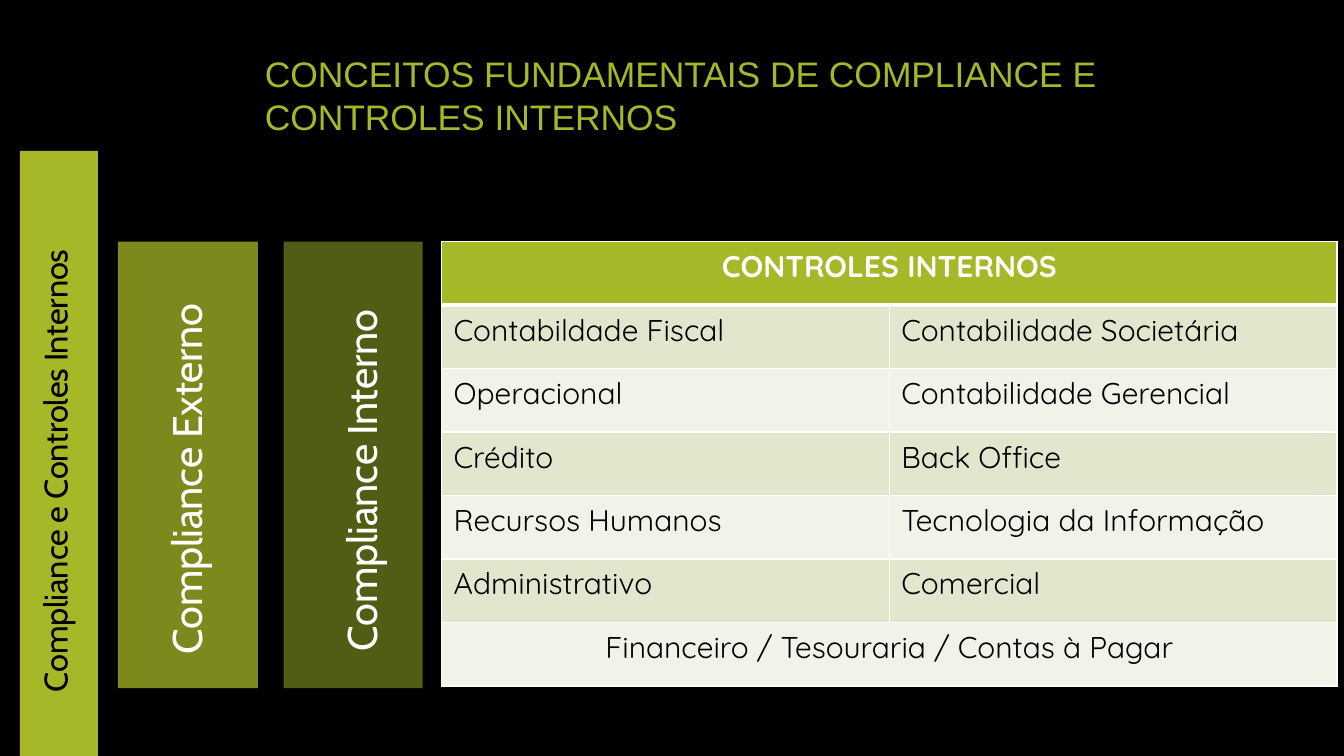
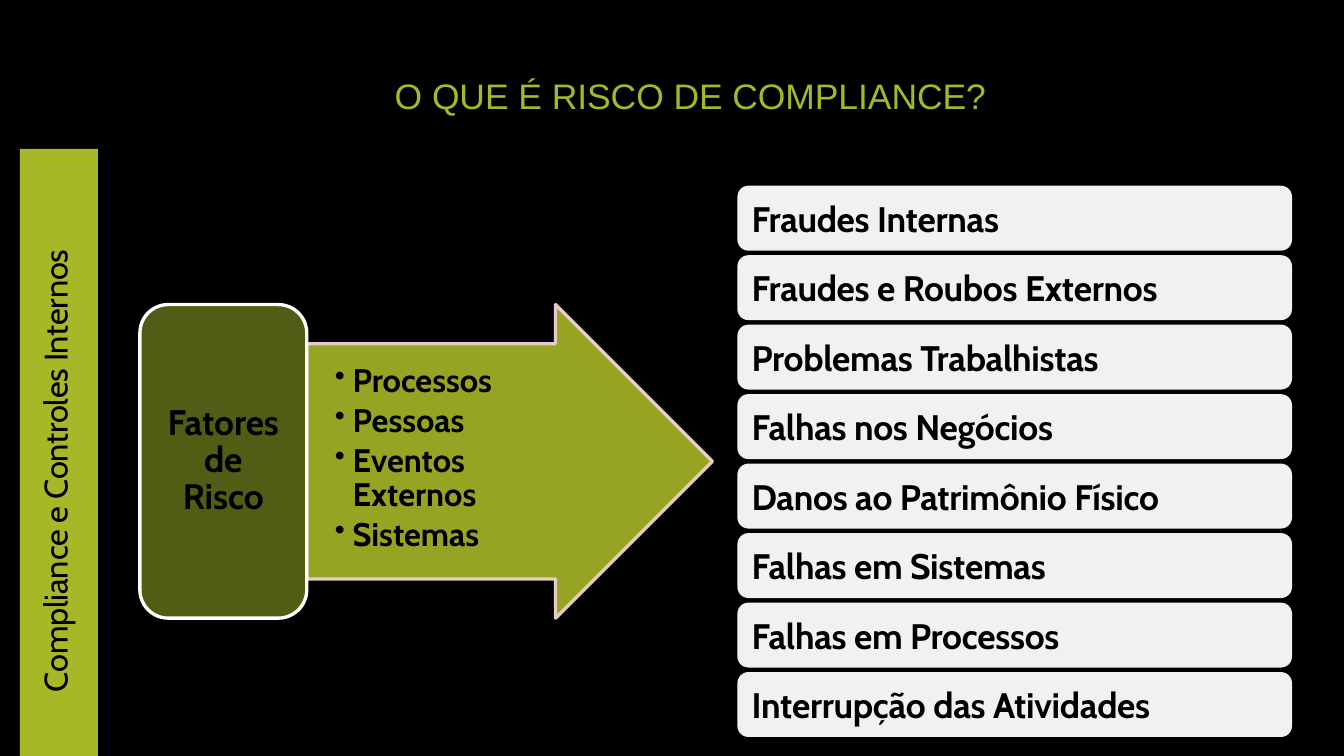
"""Builds two slides on compliance, internal controls and compliance risk."""
from dataclasses import dataclass

from lxml import etree
from pptx import Presentation
from pptx.dml.color import RGBColor
from pptx.enum.shapes import MSO_SHAPE
from pptx.enum.text import MSO_ANCHOR, PP_ALIGN
from pptx.oxml.ns import qn
from pptx.util import Pt

RECT, ROUND, ARROW = MSO_SHAPE.RECTANGLE, MSO_SHAPE.ROUNDED_RECTANGLE, MSO_SHAPE.RIGHT_ARROW
LEFT, CENTER = PP_ALIGN.LEFT, PP_ALIGN.CENTER
TOP, MIDDLE = MSO_ANCHOR.TOP, MSO_ANCHOR.MIDDLE
EMU_PER_PX = 7620
WIDTH, HEIGHT = 1345, 757


@dataclass(frozen=True)
class Theme:
    black: str = "000000"
    white: str = "FFFFFF"
    lime: str = "A6B727"
    olive: str = "7D891D"
    dark_olive: str = "535C14"
    pink: str = "E8CACA"
    gray: str = "F1F1F1"
    bands: tuple = ("E1E6CD", "F1F3E8")
    title_font: str = "Arial"
    body_font: str = "Cabin"
    table_font: str = "Quicksand"
    title_size: float = 21.3
    pillar_size: float = 24.9
    label_size: float = 19.6
    table_size: float = 18


T = Theme()

SIDEBAR = "Compliance e Controles Internos"
CONTROLS_TITLE = "CONCEITOS FUNDAMENTAIS DE COMPLIANCE E CONTROLES INTERNOS"
RISK_TITLE = "O QUE É RISCO DE COMPLIANCE?"
PILLARS = [
    ("Compliance Externo", T.olive, (118, 242, 140, 447), (161, 277, 50, 378)),
    ("Compliance Interno", T.dark_olive, (284, 242, 139, 447), (336, 282, 50, 370)),
]
CONTROLS = [
    ("CONTROLES INTERNOS",),
    ("Contabildade Fiscal", "Contabilidade Societária"),
    ("Operacional", "Contabilidade Gerencial"),
    ("Crédito", "Back Office"),
    ("Recursos Humanos", "Tecnologia da Informação"),
    ("Administrativo", "Comercial"),
    ("Financeiro / Tesouraria / Contas à Pagar",),
]
FACTORS_LABEL = "Fatores\vde\vRisco"
FACTORS = ["Processos", "Pessoas", "Eventos Externos", "Sistemas"]
RISKS = [
    "Fraudes Internas", "Fraudes e Roubos Externos", "Problemas Trabalhistas",
    "Falhas nos Negócios", "Danos ao Patrimônio Físico", "Falhas em Sistemas",
    "Falhas em Processos", "Interrupção das Atividades",
]


def px(n):
    return round(n * EMU_PER_PX)


def rgb(color):
    return RGBColor.from_string(color)


def write(tf, *lines, size, color=T.black, font=T.body_font, bold=False, align=LEFT,
          spc=0, leading=None, before=0, bullet=False):
    for i, line in enumerate(lines):
        p = tf.paragraphs[0] if i == 0 else tf.add_paragraph()
        p.text = line
        p.alignment = align
        p.space_before = Pt(before)
        if leading:
            p.line_spacing = leading
        if bullet:
            pPr = p._p.get_or_add_pPr()
            pPr.set("marL", str(px(20)))
            pPr.set("indent", str(px(-18)))
            etree.SubElement(pPr, qn("a:buSzPct")).set("val", "91000")
            etree.SubElement(pPr, qn("a:buChar")).set("char", "•")
        for r in p.runs:
            r.font.size, r.font.name, r.font.bold = Pt(size), font, bold
            r.font.color.rgb = rgb(color)
            r._r.get_or_add_rPr().set("spc", str(round(spc * 100)))


def frame(sp, anchor=TOP, inset=0):
    tf = sp.text_frame
    tf.word_wrap = True
    tf.vertical_anchor = anchor
    tf.margin_left, tf.margin_right = px(inset), px(inset)
    tf.margin_top = tf.margin_bottom = 0
    return tf


def add_text(s, box, *lines, anchor=TOP, upward=False, **fmt):
    tf = frame(s.shapes.add_textbox(*map(px, box)), anchor)
    if upward:
        tf._txBody.bodyPr.set("vert", "vert270")
    write(tf, *lines, **fmt)


def add_box(s, kind, box, fill, line=None, adjust=(), alpha=None):
    sp = s.shapes.add_shape(kind, *map(px, box))
    sp.shadow.inherit = False
    sp.fill.solid()
    sp.fill.fore_color.rgb = rgb(fill)
    if alpha:
        clr = sp._element.spPr.find(qn("a:solidFill"))[0]
        etree.SubElement(clr, qn("a:alpha")).set("val", str(alpha * 1000))
    if line:
        sp.line.color.rgb = rgb(line)
        sp.line.width = Pt(2)
    else:
        sp.line.fill.background()
    for i, value in enumerate(adjust):
        sp.adjustments[i] = value
    return sp


def set_borders(cell, **widths):
    tcPr = cell._tc.get_or_add_tcPr()
    for i, side in enumerate("LRTB"):
        ln = etree.Element(qn("a:ln" + side), w=str(Pt(widths.get(side, 1))))
        fill = etree.SubElement(ln, qn("a:solidFill"))
        etree.SubElement(fill, qn("a:srgbClr")).set("val", T.white)
        tcPr.insert(i, ln)


def add_controls_table(s, x, y, w, h):
    count = len(CONTROLS)
    table = s.shapes.add_table(count, 2, *map(px, (x, y, w, h))).table
    for row in table.rows:
        row.height = px(h / count)
    for i, texts in enumerate(CONTROLS):
        header, merged = i == 0, len(texts) == 1
        for j in range(2):
            cell = table.cell(i, j)
            cell.fill.solid()
            cell.fill.fore_color.rgb = rgb(T.lime if header else T.bands[(i - 1) % 2])
            set_borders(cell, B=3 if header else 1, T=3 if i == 1 else 1)
        if merged:
            table.cell(i, 0).merge(table.cell(i, 1))
        for j, text in enumerate(texts):
            write(table.cell(i, j).text_frame, text, size=T.table_size, font=T.table_font,
                  color=T.white if header else T.black, bold=header,
                  align=CENTER if merged else LEFT)


def add_slide(prs, title, title_x, title_w, bar_y):
    s = prs.slides.add_slide(prs.slide_layouts[6])
    add_text(s, (title_x, 50, title_w, 90), title, anchor=MIDDLE,
             size=T.title_size, color=T.lime, font=T.title_font)
    add_box(s, RECT, (20, bar_y, 78, HEIGHT - bar_y), T.lime)
    add_text(s, (35, 212, 40, 481), SIDEBAR, upward=True, size=T.label_size, spc=-0.1)
    return s


def controls_slide(prs):
    s = add_slide(prs, CONTROLS_TITLE, 265, 1026, 151)
    for text, fill, bar, label in PILLARS:
        add_box(s, RECT, bar, fill)
        add_text(s, label, text, upward=True, size=T.pillar_size, color=T.white, spc=-0.1)
    add_controls_table(s, 442, 242, 896, 445)


def risk_slide(prs):
    s = add_slide(prs, RISK_TITLE, 395, 661, 149)
    add_box(s, ARROW, (307, 305, 406, 314), T.lime, T.pink, (0.75, 0.5), alpha=90)
    add_text(s, (333, 366, 172, 196), *FACTORS, size=T.label_size, bold=True,
             leading=Pt(20.4), before=3.6, bullet=True)
    sp = add_box(s, ROUND, (140, 305, 167, 314), T.dark_olive, T.white, (0.17,))
    write(frame(sp, MIDDLE), FACTORS_LABEL, size=T.title_size, bold=True,
          align=CENTER, leading=0.87)
    first, last = 186, 673
    pitch = (last - first) / (len(RISKS) - 1)
    for i, risk in enumerate(RISKS):
        sp = add_box(s, ROUND, (738, first + i * pitch, 555, 65), T.gray, adjust=(0.17,))
        write(frame(sp, MIDDLE, inset=11), risk, size=T.title_size, bold=True, spc=-0.15)


def main():
    prs = Presentation()
    prs.slide_width, prs.slide_height = px(WIDTH), px(HEIGHT)
    bg = prs.slide_master.background.fill
    bg.solid()
    bg.fore_color.rgb = rgb(T.black)
    controls_slide(prs)
    risk_slide(prs)
    prs.save("out.pptx")


if __name__ == "__main__":
    main()
